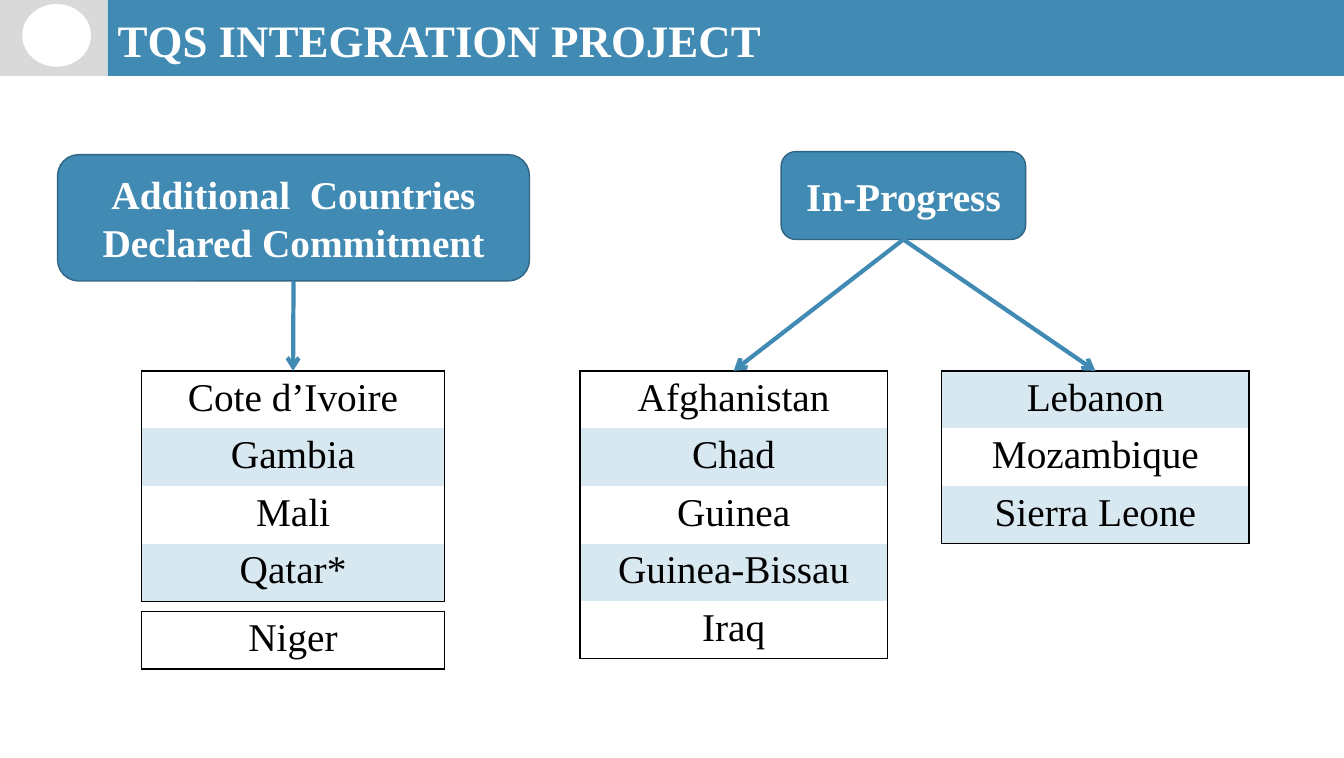
from pptx import Presentation
from pptx.dml.color import RGBColor
from pptx.enum.shapes import MSO_CONNECTOR, MSO_SHAPE
from pptx.enum.text import MSO_ANCHOR, PP_ALIGN
from pptx.oxml.ns import qn
from pptx.util import Inches, Pt
from lxml.etree import SubElement

SLIDE_WIDTH, SLIDE_HEIGHT = 13.3, 7.5
BLUE, DARK_BLUE, PALE_BLUE = "418AB3", "306684", "D8E8F1"
GREY, WHITE, BLACK = "D9D9D9", "FFFFFF", "000000"
FONT = "Times New Roman"
ROW_HEIGHT = 0.57
LIST_TOP = 3.67

COMMITTED = ["Cote d’Ivoire", "Gambia", "Mali", "Qatar*", "Niger"]
IN_PROGRESS = ["Afghanistan", "Chad", "Guinea", "Guinea-Bissau", "Iraq",
               "Lebanon", "Mozambique", "Sierra Leone"]


def color(value):
    return RGBColor.from_string(value)


def inches(*lengths):
    return [Inches(length) for length in lengths]


def add_text(paragraph, text, size, text_color, bold=False):
    run = paragraph.add_run()
    run.text = text
    run.font.name, run.font.size, run.font.bold = FONT, Pt(size), bold
    run.font.color.rgb = color(text_color)


def add_block(slide, preset, box, fill, line=None):
    shape = slide.shapes.add_shape(preset, *inches(*box))
    shape.shadow.inherit = False
    shape.fill.solid()
    shape.fill.fore_color.rgb = color(fill)
    if line:
        shape.line.color.rgb = color(line)
        shape.line.width = Pt(1)
    else:
        shape.line.fill.background()
    return shape


# Header band with emblem spot and title
def add_header(slide, left, top, width, height, text):
    emblem_width = 0.08 * width
    band = (left + emblem_width, top, width - emblem_width, height)
    add_block(slide, MSO_SHAPE.RECTANGLE, band, BLUE)
    add_block(slide, MSO_SHAPE.RECTANGLE, (left, top, emblem_width, height), GREY)
    add_block(slide, MSO_SHAPE.OVAL, (left + 0.22, top + 0.04, 0.68, 0.62), WHITE)

    title = slide.shapes.title
    title.left, title.top, title.width, title.height = inches(
        band[0], top + 0.06, band[2], 0.66)
    frame = title.text_frame
    frame.word_wrap = True
    frame.vertical_anchor = MSO_ANCHOR.MIDDLE
    frame.paragraphs[0].alignment = PP_ALIGN.LEFT
    add_text(frame.paragraphs[0], text, 32, WHITE, bold=True)
    # Bring the title in front of the band
    slide.shapes.element.append(title.element)


# Rounded heading above the country lists
def add_heading(slide, box, text):
    shape = add_block(slide, MSO_SHAPE.ROUNDED_RECTANGLE, box, BLUE, DARK_BLUE)
    frame = shape.text_frame
    frame.word_wrap = True
    frame.vertical_anchor = MSO_ANCHOR.MIDDLE
    frame.paragraphs[0].alignment = PP_ALIGN.CENTER
    add_text(frame.paragraphs[0], text, 28, WHITE, bold=True)


def set_borders(cell, is_first, is_last):
    properties = cell._tc.get_or_add_tcPr()
    sides = {"a:lnL": True, "a:lnR": True, "a:lnT": is_first, "a:lnB": is_last}
    for tag, visible in sides.items():
        line = SubElement(properties, qn(tag), w=str(Pt(1)))
        if visible:
            fill = SubElement(line, qn("a:solidFill"))
            SubElement(fill, qn("a:srgbClr"), val=BLACK)
        else:
            SubElement(line, qn("a:noFill"))


# Outlined country list; shading alternates through the whole numbered list
def add_country_list(slide, left, top, width, countries, start=0):
    count = len(countries)
    table = slide.shapes.add_table(
        count, 1, *inches(left, top, width, count * ROW_HEIGHT)).table
    table.first_row = table.horz_banding = False
    for index, country in enumerate(countries):
        cell = table.cell(index, 0)
        set_borders(cell, index == 0, index == count - 1)
        cell.fill.solid()
        cell.fill.fore_color.rgb = color(PALE_BLUE if (start + index) % 2 else WHITE)
        cell.margin_left = cell.margin_right = Inches(0.13)
        cell.margin_top = cell.margin_bottom = Inches(0.05)
        paragraph = cell.text_frame.paragraphs[0]
        paragraph.alignment = PP_ALIGN.CENTER
        add_text(paragraph, country, 28, BLACK)


# Arrow from the bottom of a heading to the top of a list
def add_arrow(slide, heading_box, list_left, list_width):
    left, top, width, height = heading_box
    arrow = slide.shapes.add_connector(MSO_CONNECTOR.STRAIGHT, *inches(
        left + width / 2, top + height, list_left + list_width / 2, LIST_TOP))
    arrow.line.color.rgb = color(BLUE)
    arrow.line.width = Pt(3)
    SubElement(arrow.line._get_or_add_ln(), qn("a:tailEnd"), type="arrow")
    SubElement(arrow.element.spPr, qn("a:effectLst"))


def add_committed_group(slide, heading_box, left, width):
    add_heading(slide, heading_box, "Additional  Countries Declared Commitment")
    add_country_list(slide, left, LIST_TOP, width, COMMITTED[:4])
    niger_top = LIST_TOP + 4 * ROW_HEIGHT + 0.1
    add_country_list(slide, left, niger_top, width, COMMITTED[4:], start=4)
    add_arrow(slide, heading_box, left, width)


def add_in_progress_group(slide, heading_box, left, width, gap):
    add_heading(slide, heading_box, "In-Progress")
    for column, start in enumerate((0, 5)):
        list_left = left + column * (width + gap)
        add_country_list(slide, list_left, LIST_TOP, width,
                         IN_PROGRESS[start:start + 5], start)
        add_arrow(slide, heading_box, list_left, width)


def main():
    presentation = Presentation()
    presentation.slide_width, presentation.slide_height = inches(
        SLIDE_WIDTH, SLIDE_HEIGHT)
    slide = presentation.slides.add_slide(presentation.slide_layouts[5])
    add_header(slide, 0, 0, SLIDE_WIDTH, SLIDE_HEIGHT / 10, "TQS INTEGRATION PROJECT")
    add_committed_group(slide, (0.57, 1.53, 4.67, 1.25), 1.4, 3)
    add_in_progress_group(slide, (7.73, 1.5, 2.42, 0.87), 5.74, 3.04, 0.54)
    presentation.save("out.pptx")


if __name__ == "__main__":
    main()
